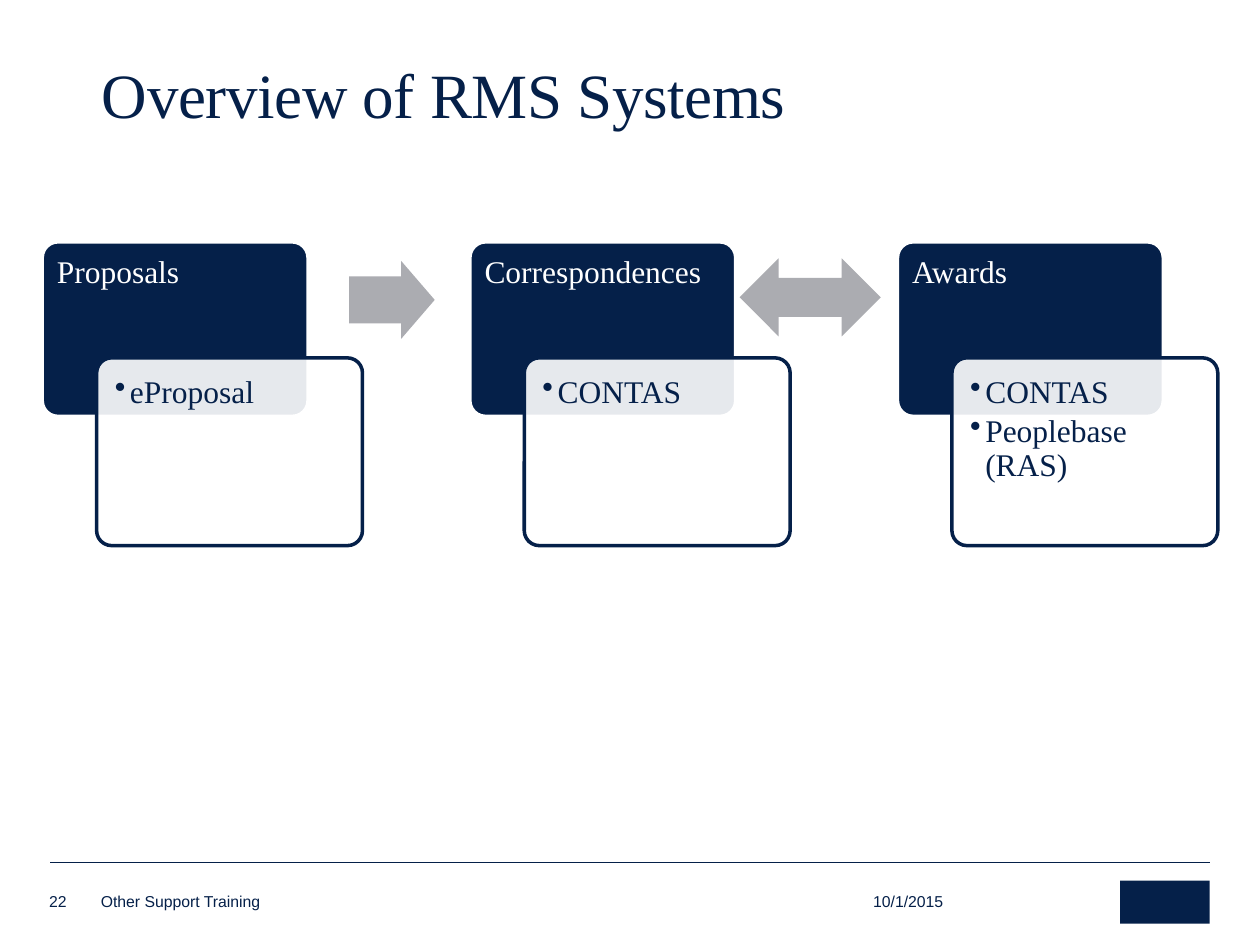
"""Build the overview slide of the RMS systems on a grid of 100 columns by 75 rows."""
from lxml import etree
from pptx import Presentation
from pptx.dml.color import RGBColor
from pptx.enum.shapes import MSO_CONNECTOR, MSO_SHAPE
from pptx.enum.text import MSO_ANCHOR, PP_ALIGN
from pptx.oxml.ns import qn
from pptx.util import Inches, Pt

NAVY = RGBColor(0x05, 0x20, 0x49)
GREY = RGBColor(0xAB, 0xAC, 0xB1)
WHITE = RGBColor(0xFF, 0xFF, 0xFF)
ROUND, RIGHT, BOTH = MSO_SHAPE.ROUNDED_RECTANGLE, MSO_SHAPE.RIGHT_ARROW, MSO_SHAPE.LEFT_RIGHT_ARROW
RECT = MSO_SHAPE.RECTANGLE
STRAIGHT = MSO_CONNECTOR.STRAIGHT
TOP, BOTTOM = MSO_ANCHOR.TOP, MSO_ANCHOR.BOTTOM
LEFT = PP_ALIGN.LEFT
SERIF, SANS = "Times New Roman", "Arial"

prs = Presentation()
prs.slide_width, prs.slide_height = Inches(10), Inches(7.5)
COL, ROW = prs.slide_width / 100, prs.slide_height / 75
s = prs.slides.add_slide(prs.slide_layouts[6])


def add_box(kind, x, y, w, h, fill, line=None, adj=()):
    box = [int(v) for v in (x * COL, y * ROW, w * COL, h * ROW)]
    sp = s.shapes.add_shape(kind, *box) if kind else s.shapes.add_textbox(*box)
    if kind:
        sp.shadow.inherit = False
        sp.fill.solid()
        sp.fill.fore_color.rgb = fill
        if line is None:
            sp.line.fill.background()
        else:
            sp.line.color.rgb = line
            sp.line.width = Pt(2)
        for i, value in enumerate(adj):
            sp.adjustments[i] = value
    return sp


def write(sp, lines, font, size, color, anchor, insets, after=0, spacing=1.0, bullet=False):
    tf = sp.text_frame
    sides = ("margin_left", "margin_top", "margin_right", "margin_bottom")
    frame = dict(zip(sides, map(Inches, insets)), word_wrap=True, vertical_anchor=anchor)
    for name, value in frame.items():
        setattr(tf, name, value)
    for i, text in enumerate(lines):
        p = tf.add_paragraph() if i else tf.paragraphs[0]
        for name, value in dict(alignment=LEFT, line_spacing=spacing, space_after=Pt(after)).items():
            setattr(p, name, value)
        if bullet:
            pPr = p._p.get_or_add_pPr()
            pPr.set("marL", str(Inches(0.12)))
            pPr.set("indent", str(-Inches(0.12)))
            etree.SubElement(pPr, qn("a:buChar")).set("char", "•")
        r = p.add_run()
        r.text = text
        for name, value in dict(name=font, size=Pt(size)).items():
            setattr(r.font, name, value)
        r.font.color.rgb = color


rule = s.shapes.add_connector(STRAIGHT, int(4 * COL), int(68.4 * ROW), int(96 * COL), int(68.4 * ROW))
rule.line.color.rgb = NAVY
rule.line.width = Pt(0.25)
etree.SubElement(rule._element.spPr, qn("a:effectLst"))

add_box(RECT, 88.9, 69.9, 7.1, 3.4, NAVY)

for text, x, w in (("10/1/2015", 69.3, 10.1), ("Other Support Training", 8, 47.1), ("22", 3.9, 2.7)):
    write(add_box(None, x, 70.6, w, 1.7, None), [text], SANS, 9, NAVY, BOTTOM, (0, 0, 0, 0))

stages = (
    ("Proposals", ["eProposal"]),
    ("Correspondences", ["CONTAS"]),
    ("Awards", ["CONTAS", "Peoplebase (RAS)"]),
)
for i, (stage, systems) in enumerate(stages):
    x = 3.35 + i * 33.94
    head = add_box(ROUND, x, 19.2, 21.1, 13.85, NAVY, WHITE, [0.09])
    write(head, [stage], SERIF, 18, WHITE, TOP, (0.08, 0.08, 0.08, 0.34), 6, 0.9)
    card = add_box(ROUND, x + 4.32, 28.4, 21.1, 14.9, WHITE, NAVY, [0.08])
    etree.SubElement(card.fill._xPr.find(".//" + qn("a:srgbClr")), qn("a:alpha")).set("val", "90000")
    write(card, systems, SERIF, 18, NAVY, TOP, (0.11, 0.11, 0.11, 0.11), 3, 0.9, True)

add_box(RIGHT, 27.7, 20.7, 6.8, 6.2, GREY, adj=(0.6, 0.43))
add_box(BOTH, 58.7, 20.5, 11.2, 6.2, GREY, adj=(0.5, 0.5))

title = add_box(None, 7.1, 4.5, 88.5, 6.5, None)
write(title, ["Overview of RMS Systems"], SERIF, 36, NAVY, BOTTOM, (0.1, 0.05, 0.1, 0.05), 0, 0.9)
title.text_frame.paragraphs[0].runs[0].font._element.set("spc", "-20")

prs.save("out.pptx")
